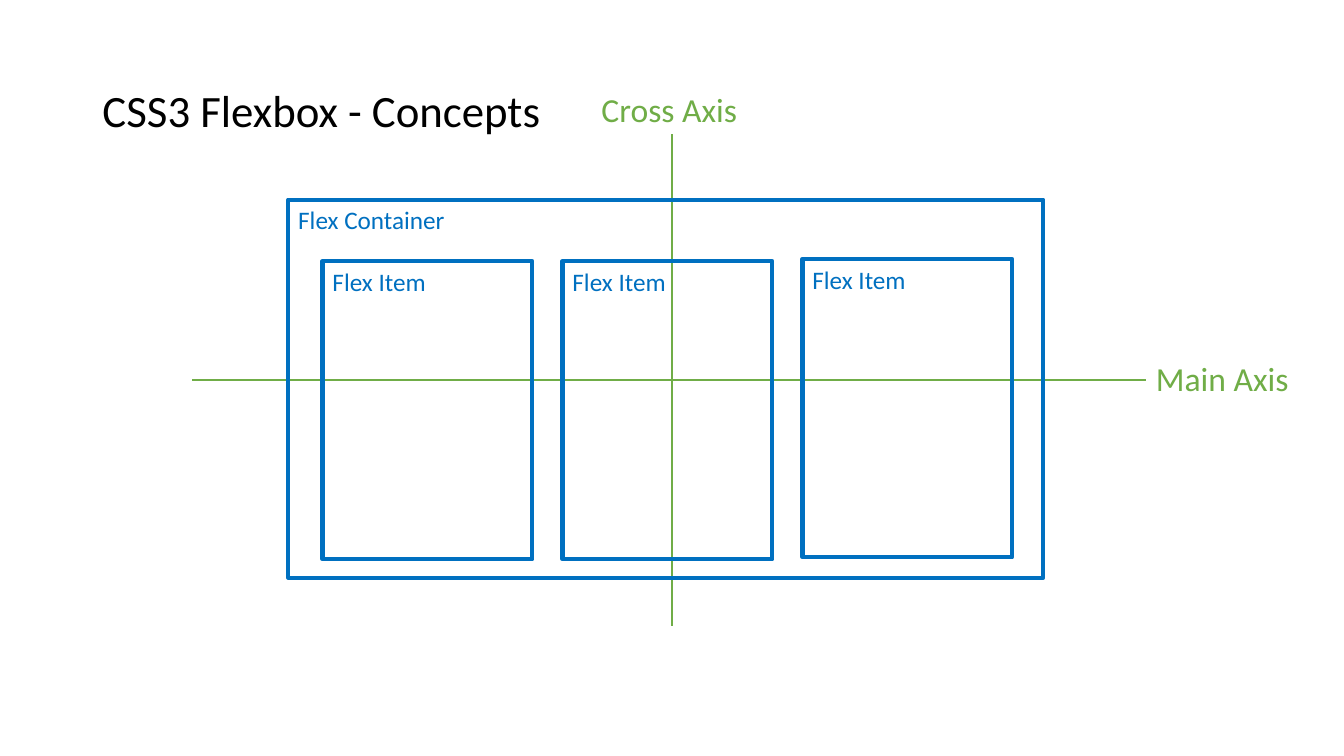
from pptx import Presentation
from pptx.dml.color import RGBColor
from pptx.enum.shapes import MSO_CONNECTOR as Connector, MSO_SHAPE as Shape
from pptx.enum.text import MSO_ANCHOR as Anchor, MSO_AUTO_SIZE as AutoSize, PP_ALIGN as Align
from pptx.oxml.ns import qn
from pptx.util import Pt
from lxml.etree import SubElement

COLORS = {"title": "000000", "axis": "70AD47", "box": "0070C0"}


class ConceptSlide:
    """Draw styled elements on one slide, with lengths in points."""

    font_name = "Calibri"

    def __init__(self, slide):
        self.slide = slide

    def add_text(self, shape, text, size, color, anchor=Anchor.TOP):
        frame = shape.text_frame
        frame.vertical_anchor = anchor
        paragraph = frame.paragraphs[0]
        paragraph.alignment = Align.LEFT
        run = paragraph.add_run()
        run.text = text
        run.font.name = self.font_name
        run.font.size = Pt(size)
        run.font.color.rgb = RGBColor.from_string(COLORS[color])
        return frame

    def title(self, text, left, top, width, height):
        shape = self.slide.shapes.title
        shape.left, shape.top = Pt(left), Pt(top)
        shape.width, shape.height = Pt(width), Pt(height)
        frame = self.add_text(shape, text, 32, "title", Anchor.MIDDLE)
        frame.auto_size = AutoSize.NONE
        frame.paragraphs[0].line_spacing = 0.9

    def axis(self, x1, y1, x2, y2):
        line = self.slide.shapes.add_connector(
            Connector.STRAIGHT, Pt(x1), Pt(y1), Pt(x2), Pt(y2))
        line.line.color.rgb = RGBColor.from_string(COLORS["axis"])
        line.line.width = Pt(1.5)
        SubElement(line._element.spPr, qn("a:effectLst"))

    def axis_label(self, text, left, top, width, height):
        shape = self.slide.shapes.add_textbox(Pt(left), Pt(top), Pt(width), Pt(height))
        frame = self.add_text(shape, text, 24, "axis")
        frame.word_wrap = False
        frame.auto_size = AutoSize.SHAPE_TO_FIT_TEXT

    def box(self, text, left, top, width, height):
        shape = self.slide.shapes.add_shape(
            Shape.RECTANGLE, Pt(left), Pt(top), Pt(width), Pt(height))
        shape.shadow.inherit = False
        shape.fill.background()
        shape.line.color.rgb = RGBColor.from_string(COLORS["box"])
        shape.line.width = Pt(3)
        self.add_text(shape, text, 18, "box")


def main():
    presentation = Presentation()
    presentation.slide_width, presentation.slide_height = Pt(960), Pt(540)
    slide = presentation.slides.add_slide(presentation.slide_layouts[5])
    concept = ConceptSlide(slide)
    concept.title("CSS3 Flexbox - Concepts", 66, 28.75, 828, 104.4)
    concept.axis(137.5, 271.4, 818.6, 271.4)
    concept.axis(480, 95.8, 480, 447.1)
    concept.axis_label("Main Axis", 818.6, 252, 110.2, 36)
    concept.axis_label("Cross Axis", 422.6, 59.8, 115.2, 36)
    concept.box("Flex Container", 205.9, 142.6, 539.3, 270)
    for index, top in enumerate((186.5, 186.5, 185)):
        concept.box("Flex Item", 230.4 + index * 171.4, top, 149.8, 213.1)
    presentation.save("out.pptx")


if __name__ == "__main__":
    main()
